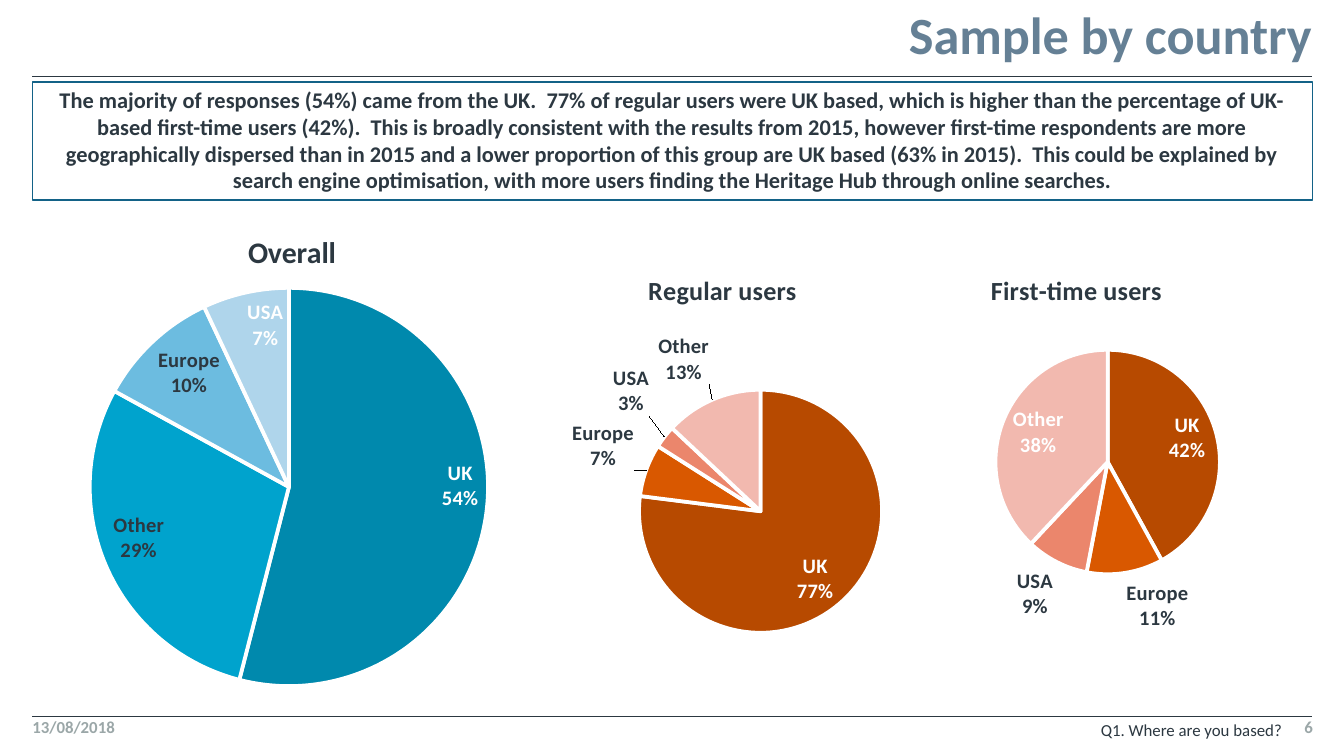
from lxml import etree
from pptx import Presentation
from pptx.chart.data import CategoryChartData
from pptx.dml.color import RGBColor
from pptx.enum.chart import XL_CHART_TYPE, XL_LABEL_POSITION
from pptx.enum.shapes import MSO_CONNECTOR, MSO_SHAPE
from pptx.enum.text import MSO_ANCHOR, PP_ALIGN
from pptx.oxml.ns import qn
from pptx.util import Pt

PIE = XL_CHART_TYPE.PIE
STRAIGHT = MSO_CONNECTOR.STRAIGHT
RECTANGLE = MSO_SHAPE.RECTANGLE
BEST_FIT = XL_LABEL_POSITION.BEST_FIT
INSIDE_END = XL_LABEL_POSITION.INSIDE_END
OUTSIDE_END = XL_LABEL_POSITION.OUTSIDE_END
LEFT, RIGHT, CENTER = PP_ALIGN.LEFT, PP_ALIGN.RIGHT, PP_ALIGN.CENTER
TOP, MIDDLE, BOTTOM = MSO_ANCHOR.TOP, MSO_ANCHOR.MIDDLE, MSO_ANCHOR.BOTTOM

COLORS = {"ink": "2C3841", "title": "658095", "muted": "9BA7A8",
          "frame": "136287", "white": "FFFFFF"}
BLUES = ["0089AD", "00A3CD", "6CBCE0", "AFD5EB"]
ORANGES = ["B74A00", "D95800", "EB866C", "F2B9AF"]
EDGE, WIDTH = 17.3, 685.4

SUMMARY = (
    "The majority of responses (54%) came from the UK.  77% of regular users were UK based, "
    "which is higher than the percentage of UK-based first-time users (42%).  This is broadly "
    "consistent with the results from 2015, however first-time respondents are more "
    "geographically dispersed than in 2015 and a lower proportion of this group are UK based "
    "(63% in 2015).  This could be explained by search engine optimisation, with more users "
    "finding the Heritage Hub through online searches.")


def rgb(name):
    return RGBColor.from_string(COLORS.get(name, name))


def style_font(font, size, color, bold=True):
    values = {"name": "Calibri", "size": Pt(size), "bold": bold}
    for key, value in values.items():
        setattr(font, key, value)
    font.color.rgb = rgb(color)


def write(shape, text, size, color, bold=True, align=LEFT, anchor=TOP,
          spacing=None, insets=(0, 0)):
    frame = shape.text_frame
    across, down = map(Pt, insets)
    values = {"word_wrap": True, "vertical_anchor": anchor, "margin_left": across,
              "margin_right": across, "margin_top": down, "margin_bottom": down}
    for key, value in values.items():
        setattr(frame, key, value)
    frame.text = text
    paragraph = frame.paragraphs[0]
    paragraph.alignment = align
    if spacing:
        paragraph.line_spacing = spacing
    style_font(paragraph.runs[0].font, size, color, bold)


def add_rule(slide, y):
    rule = slide.shapes.add_connector(STRAIGHT, Pt(EDGE), Pt(y), Pt(EDGE + WIDTH), Pt(y))
    rule.line.color.rgb = rgb("ink")
    rule.line.width = Pt(0.5)
    etree.SubElement(rule._element.spPr, qn("a:effectLst"))


def add_header(slide, box):
    left, top, width, height = map(Pt, box)
    title = slide.shapes.title
    title.left, title.top, title.width, title.height = left, top, width, height
    write(title, "Sample by country", 28, "title", align=RIGHT, anchor=BOTTOM, spacing=0.9)


def add_summary(slide, box):
    panel = slide.shapes.add_shape(RECTANGLE, *map(Pt, box))
    panel.shadow.inherit = False
    panel.fill.solid()
    panel.fill.fore_color.rgb = rgb("white")
    panel.line.color.rgb = rgb("frame")
    panel.line.width = Pt(0.75)
    write(panel, SUMMARY, 12, "ink", align=CENTER, anchor=MIDDLE, spacing=0.99,
          insets=(6, 3))


def set_layout(parent, index, **places):
    """Give a chart part a manual layout, in fractions of the chart."""
    for old in parent.findall(qn("c:layout")):
        parent.remove(old)
    layout = etree.Element(qn("c:layout"))
    manual = etree.SubElement(layout, qn("c:manualLayout"))
    if "w" in places:
        etree.SubElement(manual, qn("c:layoutTarget"), val="inner")
    if "edge" in places:
        places.pop("edge")
        for mode in ("xMode", "yMode"):
            etree.SubElement(manual, qn("c:" + mode), val="edge")
    for key, value in places.items():
        etree.SubElement(manual, qn("c:" + key), val=str(value))
    parent.insert(index, layout)


def show_parts(labels, shown):
    """Show the category above the value or percentage."""
    for part in ("showVal", "showCatName", "showPercent"):
        labels.find(qn("c:" + part)).set("val", str(int(part in ("showCatName", shown))))
    separator = etree.Element(qn("c:separator"))
    separator.text = "\n"
    labels.find(qn("c:showBubbleSize")).addnext(separator)


def add_pie(slide, box, title, title_size, title_at, pie_at, shares, colors, shown,
            number_format, position, label_color, special):
    data = CategoryChartData(number_format=number_format)
    data.categories = list(shares)
    data.add_series("Series 1", list(shares.values()))
    chart = slide.shapes.add_chart(PIE, *map(Pt, box), data).chart
    style_font(chart.font, 10, "ink", bold=False)
    chart.has_legend = False

    # Title and pie places
    chart.has_title = True
    heading = chart.chart_title
    heading.text_frame.text = title
    style_font(heading.text_frame.paragraphs[0].runs[0].font, title_size, "ink")
    set_layout(heading._element, 1, edge=True, x=title_at[0], y=title_at[1])
    x, y, w, h = pie_at
    set_layout(chart._chartSpace.chart.plotArea, 0, edge=True, x=x, y=y, w=w, h=h)

    # Slices
    plot = chart.plots[0]
    plot.vary_by_categories = True
    series = plot.series[0]
    for index, color in enumerate(colors):
        slice_format = series.points[index].format
        slice_format.fill.solid()
        slice_format.fill.fore_color.rgb = rgb(color)
        slice_format.line.color.rgb = rgb("white")
        slice_format.line.width = Pt(2)

    # Labels: one style for all, then the slices that differ
    labels = series.data_labels
    labels.number_format = "0%"
    labels.number_format_is_linked = False
    labels.position = position
    style_font(labels.font, 11, label_color)
    show_parts(labels._element, shown)
    for name, (color, place, shift) in special.items():
        index = list(shares).index(name)
        label = series.points[index].data_label
        style_font(label.font, 11, color)
        label.position = place
        element = series._element.xpath(f".//c:dLbl[c:idx/@val='{index}']")[0]
        show_parts(element, shown)
        if shift:
            set_layout(element, 1, x=shift[0], y=shift[1])


def add_footer(slide, box):
    left, top, width, height = box
    question = slide.shapes.add_textbox(Pt(190), Pt(top - 0.7), Pt(502.6), Pt(16.6))
    write(question, "Q1. Where are you based?", 9, "ink", bold=False, align=RIGHT,
          anchor=MIDDLE, spacing=0.99, insets=(6, 3))
    part = 57
    for text, x, align in (("13/08/2018", left, LEFT), ("6", left + width - part, RIGHT)):
        note = slide.shapes.add_textbox(Pt(x), Pt(top), Pt(part), Pt(height))
        write(note, text, 9, "muted", align=align)


def main():
    deck = Presentation()
    deck.slide_width, deck.slide_height = Pt(720), Pt(405)
    slide = deck.slides.add_slide(deck.slide_layouts[5])

    add_header(slide, (218, 0, 484.7, 35.3))
    for y in (41, 383.8):
        add_rule(slide, y)
    add_summary(slide, (EDGE, 43.9, 686, 63.2))

    # Everyone
    add_pie(slide, (EDGE, 105, 275, 273.6), "Overall", 16, (0.41, 0.06),
            (0.11, 0.18, 0.78, 0.78),
            {"UK": 0.54, "Other": 0.29, "Europe": 0.1, "USA": 0.07}, BLUES, "showVal",
            "0%", INSIDE_END, "ink",
            {"UK": ("white", INSIDE_END, None), "USA": ("white", INSIDE_END, None)})

    # The two user groups
    outside = ("ink", OUTSIDE_END, None)
    groups = [
        (270, "Regular users", (0.31, 0.03), (0.3, 0.34, 0.54, 0.62), (77, 7, 3, 13),
         {"Europe": ("ink", OUTSIDE_END, (-0.01, 0.01)),
          "USA": ("ink", OUTSIDE_END, (-0.02, -0.04)),
          "Other": ("ink", OUTSIDE_END, (0, -0.02))}),
        (460.8, "First-time users", (0.28, 0.03), (0.3, 0.24, 0.5, 0.57), (42, 11, 9, 38),
         {"Europe": outside, "USA": outside}),
    ]
    for left, title, title_at, pie_at, values, special in groups:
        shares = dict(zip(("UK", "Europe", "USA", "Other"), values))
        add_pie(slide, (left, 136.8, 241.2, 211), title, 14, title_at, pie_at, shares,
                ORANGES, "showPercent", "General", BEST_FIT, "white", special)

    add_footer(slide, (EDGE, 383.8, 686, 13))
    deck.save("out.pptx")


if __name__ == "__main__":
    main()
